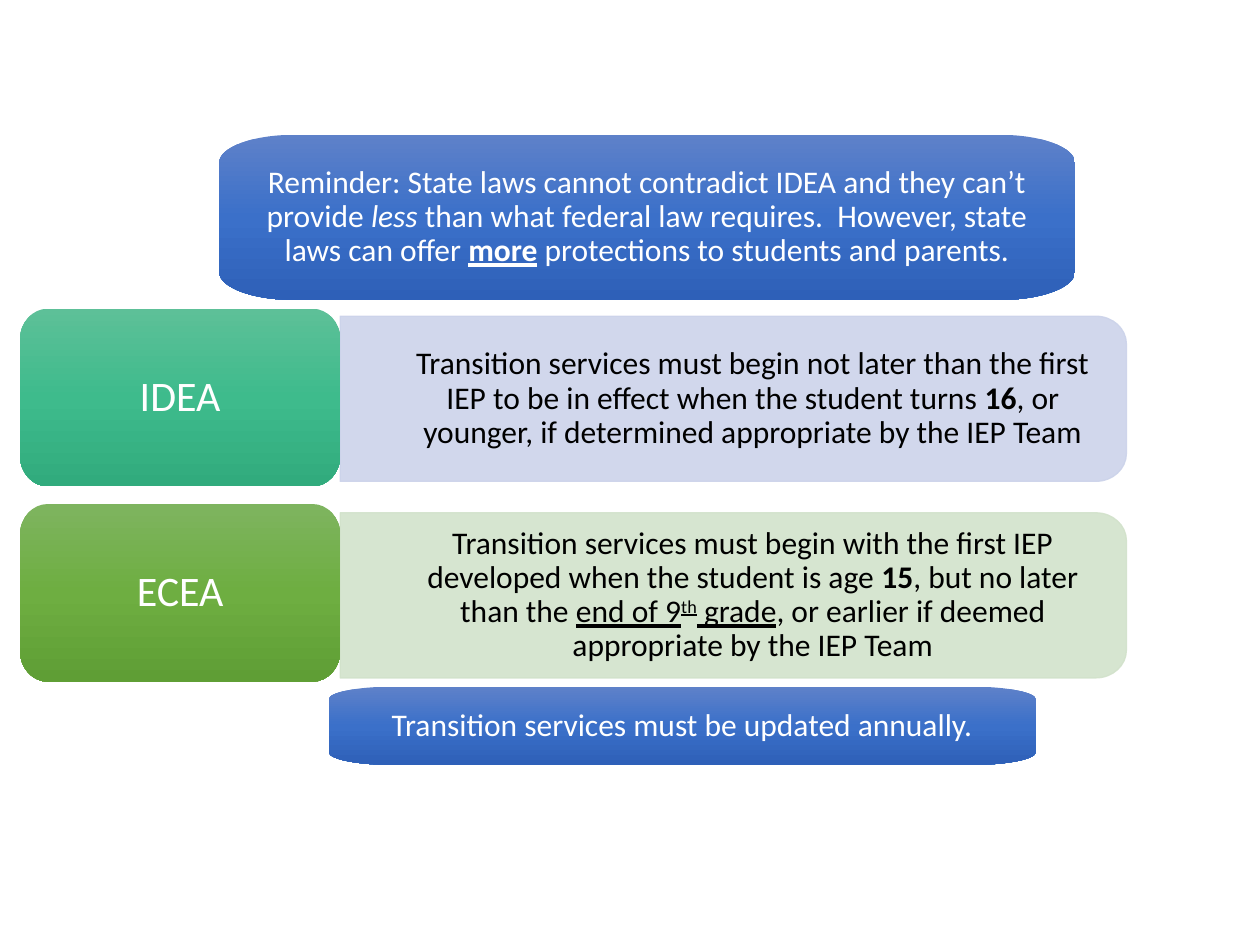
"""Build a slide comparing the IDEA and ECEA rules on transition services."""
from copy import deepcopy

from lxml.etree import SubElement
from pptx import Presentation
from pptx.dml.color import RGBColor
from pptx.enum.text import MSO_ANCHOR, PP_ALIGN
from pptx.oxml.ns import qn
from pptx.util import Inches, Pt

WHITE = RGBColor(0xFF, 0xFF, 0xFF)
BLACK = RGBColor(0x00, 0x00, 0x00)
LAVENDER = RGBColor(0xCC, 0xD3, 0xEA)
PALE_GREEN = RGBColor(0xD2, 0xE2, 0xCB)
BLUES = [RGBColor(0x5E, 0x81, 0xC9), RGBColor(0x3B, 0x70, 0xC9), RGBColor(0x2E, 0x60, 0xB8)]
TEALS = [RGBColor(0x5D, 0xC0, 0x98), RGBColor(0x3E, 0xBB, 0x8C), RGBColor(0x31, 0xAB, 0x7D)]
GREENS = [RGBColor(0x7E, 0xB4, 0x5F), RGBColor(0x6E, 0xAE, 0x41), RGBColor(0x5F, 0x9E, 0x35)]

BOLD = {"bold": True}
ITALIC = {"italic": True}
UNDERLINE = {"underline": True}
PANEL_LEFT, PANEL_W, PANEL_H = 2.7, 6.24, 1.31
TILE_LEFT, TILE_W, TILE_H = 0.16, 2.54, 1.41

REMINDER = [
    ("Reminder: State laws cannot contradict IDEA and they can’t provide ", {}),
    ("less", ITALIC),
    (" than what federal law requires.  However, state laws can offer ", {}),
    ("more", BOLD | UNDERLINE),
    (" protections to students and parents.", {}),
]
IDEA_RULE = [
    ("Transition services must begin not later than the first IEP to be in effect "
     "when the student turns ", {}),
    ("16", BOLD),
    (", or younger, if determined appropriate by the IEP Team", {}),
]
ECEA_RULE = [
    ("Transition services must begin with the first IEP developed when the student is age ", {}),
    ("15", BOLD),
    (", but no later than the ", {}),
    ("end of 9", UNDERLINE),
    ("th", UNDERLINE | {"baseline": 30000}),
    (" grade", UNDERLINE),
    (", or earlier if deemed appropriate by the IEP Team", {}),
]
ROWS = [
    ("IDEA", TEALS, 2.45, IDEA_RULE, LAVENDER, 2.51),
    ("ECEA", GREENS, 4.0, ECEA_RULE, PALE_GREEN, 4.07),
]


class Deck:
    """Hold the style and the current slide."""

    font = "Calibri"
    body_size = Pt(18)
    label_size = Pt(24)
    line_spacing = 0.9
    opacity = "89000"
    corner_pull = 0.55

    def __init__(self, slide):
        self.slide = slide

    def outline(self, box, rx, ry, left_radius=True):
        """Draw a box with elliptical corners, square on the left if asked."""
        x, y, w, h = map(Inches, box)
        rx, ry = Inches(rx), Inches(ry)
        lx, ly = (rx, ry) if left_radius else (0, 0)
        points = [(0, ly), (lx, 0), (w - rx, 0), (w, ry),
                  (w, h - ry), (w - rx, h), (lx, h), (0, h - ly)]
        builder = self.slide.shapes.build_freeform(*points[0])
        builder.add_line_segments(points[1:], close=True)
        sp = builder.convert_to_shape(x, y)
        sp.shadow.inherit = False
        lines = list(sp._element.iter(qn("a:lnTo")))
        for i, corner in enumerate([(0, 0), (w, 0), (w, h), (0, h)]):
            if corner[0] or left_radius:
                self.bend(lines[2 * i], points[2 * i], points[2 * i + 1], corner)
        return sp

    def bend(self, line, start, end, corner):
        """Turn a straight corner cut into a curve."""
        curve = line.makeelement(qn("a:cubicBezTo"))
        pulled = [[round(a + self.corner_pull * (c - a)) for a, c in zip(point, corner)]
                  for point in (start, end)]
        for px, py in (*pulled, end):
            pt = SubElement(curve, qn("a:pt"))
            pt.set("x", str(px))
            pt.set("y", str(py))
        line.getparent().replace(line, curve)

    def gradient(self, sp, colors):
        """Fill a shape from top to bottom with evenly spaced colours."""
        sp.line.fill.background()
        sp.fill.gradient()
        sp.fill.gradient_angle = 270
        stop_list = sp._element.spPr.find(qn("a:gradFill")).find(qn("a:gsLst"))
        stop_list.append(deepcopy(stop_list[-1]))
        for i, (stop, color) in enumerate(zip(sp.fill.gradient_stops, colors)):
            stop.color.rgb = color
            stop.position = i / (len(colors) - 1)

    def text(self, sp, runs, size, color, insets, indent=0):
        """Write one centred paragraph of formatted runs."""
        tf = sp.text_frame
        sides = ("margin_left", "margin_top", "margin_right", "margin_bottom")
        frame = {"word_wrap": True, "vertical_anchor": MSO_ANCHOR.MIDDLE}
        for name, value in (frame | dict(zip(sides, map(Inches, insets)))).items():
            setattr(tf, name, value)
        p = tf.paragraphs[0]
        p.alignment = PP_ALIGN.CENTER
        p.line_spacing = self.line_spacing
        if indent:
            p.level = 1
            pPr = p._p.get_or_add_pPr()
            pPr.set("marL", str(Inches(indent)))
            pPr.set("indent", "0")
        for words, extra in runs:
            r = p.add_run()
            r.text = words
            r.font.color.rgb = color
            for name, value in ({"name": self.font, "size": size} | extra).items():
                if name == "baseline":
                    r._r.get_or_add_rPr().set(name, str(value))
                else:
                    setattr(r.font, name, value)

    def block(self, box, rx, ry, colors, runs, size):
        """Add a gradient block with white text."""
        sp = self.outline(box, rx, ry)
        self.gradient(sp, colors)
        self.text(sp, runs, size, WHITE, (0.14, 0.11, 0.14, 0.11))

    def banner(self, box, rx, ry, runs):
        """Add a blue note."""
        self.block(box, rx, ry, BLUES, runs, self.body_size)

    def tile(self, top, label, colors):
        """Add the name of a law."""
        box = (TILE_LEFT, top, TILE_W, TILE_H)
        self.block(box, 0.22, 0.24, colors, [(label, {})], self.label_size)

    def panel(self, top, runs, color):
        """Add the translucent panel that states a rule."""
        sp = self.outline((PANEL_LEFT, top, PANEL_W, PANEL_H), 0.24, 0.22, left_radius=False)
        sp.line.width = Pt(0.75)
        for fill in (sp.fill, sp.line.fill):
            fill.solid()
            fill.fore_color.rgb = color
        for clr in sp._element.spPr.iter(qn("a:srgbClr")):
            SubElement(clr, qn("a:alpha")).set("val", self.opacity)
        self.text(sp, runs, self.body_size, BLACK, (0.07, 0.1, 0.14, 0.1), indent=0.38)


def main():
    """Build and save the slide."""
    prs = Presentation()
    prs.slide_width, prs.slide_height = Inches(10), Inches(7.5)
    deck = Deck(prs.slides.add_slide(prs.slide_layouts[6]))
    deck.banner((1.74, 1.07, 6.79, 1.31), 0.59, 0.22, REMINDER)
    for label, colors, tile_top, rule, tint, panel_top in ROWS:
        deck.panel(panel_top, rule, tint)
        deck.tile(tile_top, label, colors)
    deck.banner((2.61, 5.45, 5.61, 0.62), 0.5, 0.1,
                [("Transition services must be updated annually.", {})])
    prs.save("out.pptx")


if __name__ == "__main__":
    main()
